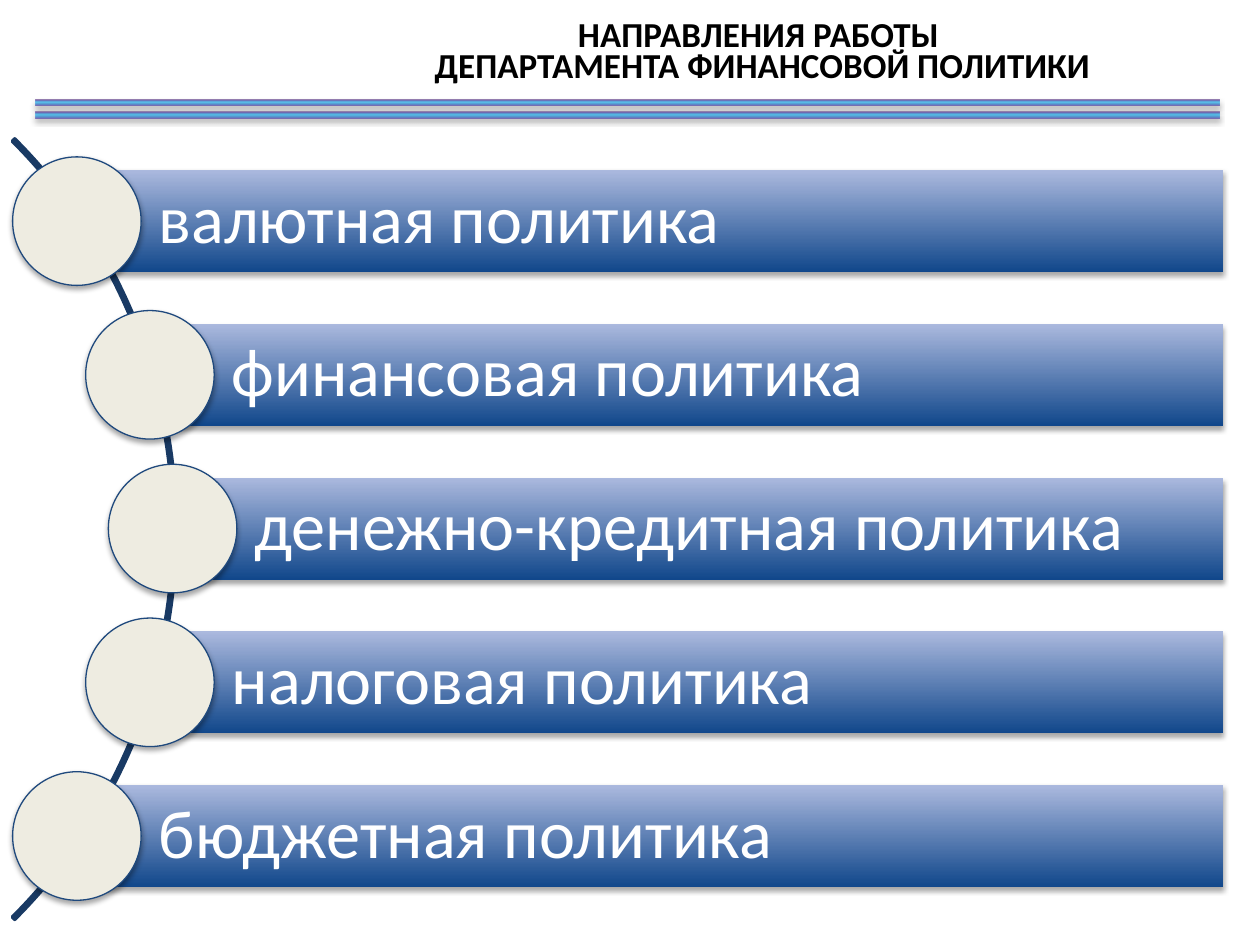
from lxml.etree import SubElement
from pptx import Presentation
from pptx.dml.color import RGBColor
from pptx.enum.shapes import MSO_SHAPE
from pptx.enum.text import MSO_ANCHOR, PP_ALIGN
from pptx.oxml.ns import qn
from pptx.util import Inches, Pt

COLORS = {
    "purple": "7B58A6",
    "violet": "7C57A8",
    "cyan": "00B0F0",
    "arc": "193A64",
    "bar_dark": "11478B",
    "bar_light": "ABB9DE",
    "circle": "EEECE1",
    "outline": "1F497D",
    "white": "FFFFFF",
    "black": "000000",
}


def add_shadowed_shape(kind, left, top, width, height, stops=(), angle=0):
    shape = page.shapes.add_shape(
        kind, Inches(left), Inches(top), Inches(width), Inches(height)
    )
    shape.line.fill.background()
    if stops:
        shape.fill.gradient()
        shape.fill.gradient_angle = angle
        stop_list = shape._element.spPr.find(qn("a:gradFill")).find(qn("a:gsLst"))
        for old_stop in list(stop_list):
            stop_list.remove(old_stop)
        for position, color, opacity in stops:
            stop = SubElement(stop_list, qn("a:gs"), pos=str(position * 1000))
            tint = SubElement(stop, qn("a:srgbClr"), val=COLORS[color])
            if opacity < 100:
                SubElement(tint, qn("a:alpha"), val=str(opacity * 1000))
    shape.shadow.inherit = False
    effects = shape._element.spPr.find(qn("a:effectLst"))
    shadow = SubElement(
        effects, qn("a:outerShdw"), blurRad=str(Pt(3.1)), dist=str(Pt(1.8)),
        dir="5400000", rotWithShape="0",
    )
    shade = SubElement(shadow, qn("a:srgbClr"), val=COLORS["black"])
    SubElement(shade, qn("a:alpha"), val="35000")
    return shape


def write_text(box, text, size, color, bold=False, align=PP_ALIGN.LEFT,
               spacing=1.0, anchor=MSO_ANCHOR.TOP, margins=(0.1, 0.05, 0.1, 0.05)):
    frame = box.text_frame
    frame.word_wrap = True
    frame.vertical_anchor = anchor
    (frame.margin_left, frame.margin_top,
     frame.margin_right, frame.margin_bottom) = map(Inches, margins)
    para = frame.paragraphs[0]
    para.text = text
    para.alignment = align
    para.line_spacing = spacing
    for span in para.runs:
        span.font.name = "Calibri"
        span.font.size = Pt(size)
        span.font.bold = bold
        span.font.color.rgb = RGBColor.from_string(COLORS[color])


deck = Presentation()
deck.slide_width = Inches(10)
deck.slide_height = Inches(7.5)
page = deck.slides.add_slide(deck.slide_layouts[6])

stripe_stops = [(12, "purple", 100), (43, "cyan", 60), (100, "violet", 100)]
for stripe_top in (0.79, 0.89):
    add_shadowed_shape(
        MSO_SHAPE.RECTANGLE, 0.28, stripe_top, 9.4, 0.05, stripe_stops, 270
    )

arc = page.shapes.add_shape(
    MSO_SHAPE.BLOCK_ARC, Inches(-7.36), Inches(-0.18), Inches(8.76), Inches(8.76)
)
for index, value in enumerate((189, 27, 0.003)):
    arc.adjustments[index] = value
arc.fill.background()
arc.line.color.rgb = RGBColor.from_string(COLORS["arc"])
arc.line.width = Pt(2)
arc.shadow.inherit = False

policies = [
    ("валютная политика", 0.61),
    ("финансовая политика", 1.19),
    ("денежно-кредитная политика", 1.37),
    ("налоговая политика", 1.19),
    ("бюджетная политика", 0.61),
]
bar_stops = [(0, "bar_dark", 100), (100, "bar_light", 100)]
bar_right, bar_height, first_top, step, diameter = 9.71, 0.81, 1.35, 1.22, 1.02

for row, (policy, left) in enumerate(policies):
    top = first_top + row * step
    bar = add_shadowed_shape(
        MSO_SHAPE.RECTANGLE, left, top, bar_right - left, bar_height, bar_stops, 90
    )
    write_text(bar, policy, 39, "white", spacing=0.9, anchor=MSO_ANCHOR.MIDDLE,
               margins=(0.65, 0.11, 0.11, 0.11))
    circle = add_shadowed_shape(
        MSO_SHAPE.OVAL, left - diameter / 2, top + (bar_height - diameter) / 2,
        diameter, diameter,
    )
    circle.fill.solid()
    circle.fill.fore_color.rgb = RGBColor.from_string(COLORS["circle"])
    circle.line.color.rgb = RGBColor.from_string(COLORS["outline"])
    circle.line.width = Pt(0.75)

title = page.shapes.add_textbox(Inches(2.87), Inches(0.13), Inches(6.3), Inches(0.62))
write_text(title, "НАПРАВЛЕНИЯ РАБОТЫ\v ДЕПАРТАМЕНТА ФИНАНСОВОЙ ПОЛИТИКИ", 20, "black",
           bold=True, align=PP_ALIGN.CENTER, spacing=Pt(18))

deck.save("out.pptx")
